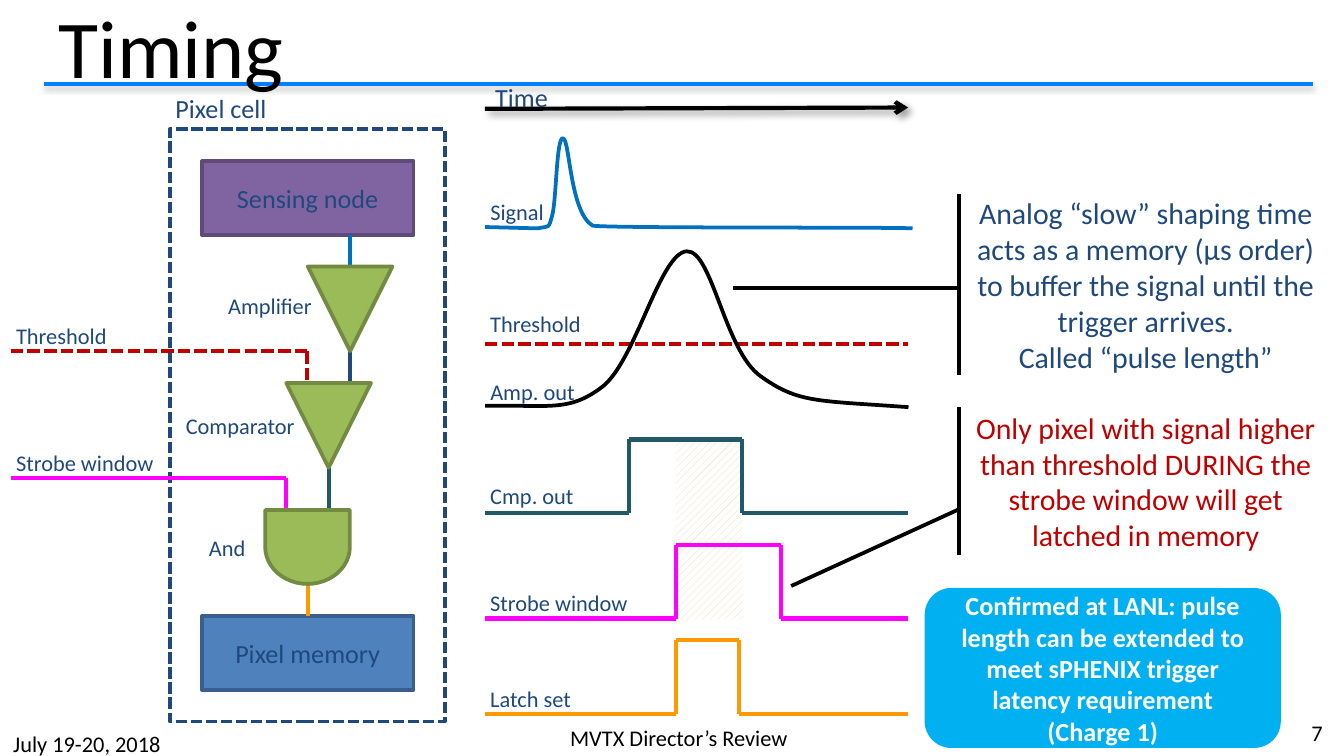
"""Build the pixel timing slide on a grid of 100 columns by 56.25 rows."""
from dataclasses import dataclass
from typing import Optional

from lxml import etree
from pptx import Presentation
from pptx.dml.color import RGBColor
from pptx.enum.dml import MSO_LINE, MSO_PATTERN
from pptx.enum.shapes import MSO_CONNECTOR, MSO_SHAPE
from pptx.enum.text import MSO_ANCHOR, PP_ALIGN
from pptx.oxml.ns import qn
from pptx.util import Inches, Pt

CELL = Inches(0.1)
STRAIGHT = MSO_CONNECTOR.STRAIGHT
DASH = MSO_LINE.SQUARE_DOT
HATCH = MSO_PATTERN.WIDE_UPWARD_DIAGONAL
RECT, ROUNDED = MSO_SHAPE.RECTANGLE, MSO_SHAPE.ROUNDED_RECTANGLE
TRIANGLE, DELAY = MSO_SHAPE.ISOSCELES_TRIANGLE, MSO_SHAPE.FLOWCHART_DELAY
CALLOUT = MSO_SHAPE.LINE_CALLOUT_1_ACCENT_BAR
MIDDLE = MSO_ANCHOR.MIDDLE
LEFT, CENTER, RIGHT = PP_ALIGN.LEFT, PP_ALIGN.CENTER, PP_ALIGN.RIGHT

BLACK, WHITE, NAVY, RED = "000000", "FFFFFF", "1F497D", "C00000"
BLUE, MAGENTA, TEAL, ORANGE = "0070C0", "FF00FF", "215968", "FF9900"
GREEN, DARK_GREEN = "9BBB59", "738A42"
TIGHT, NORMAL = (0.4, 0.4), (1, 0.5)
PLOT_LEFT, PLOT_RIGHT, PULSE_HEIGHT = 36.08, 67.57, 5.5


@dataclass
class Shadow:
    """Outer shadow in points, percent and degrees."""
    color: str
    alpha: int
    blur: float
    distance: float
    angle: int


@dataclass
class Label:
    """Text with its format."""
    text: str
    size: int = 12
    color: str = NAVY
    align: PP_ALIGN = LEFT
    inset: tuple = TIGHT
    bold: bool = False
    wrap: bool = True


@dataclass
class Block:
    """Preset shape at (column, row, columns, rows)."""
    box: tuple
    kind: MSO_SHAPE = RECT
    fill: Optional[str] = None
    line: Optional[str] = None
    dash: Optional[MSO_LINE] = None
    rotation: int = 0
    label: Optional[Label] = None
    pointer: tuple = ()


@dataclass
class Wire:
    """Straight line between two grid points."""
    start: tuple
    end: tuple
    color: str
    dash: Optional[MSO_LINE] = None
    shadow: Optional[Shadow] = None
    arrow: bool = False


@dataclass
class Pulse:
    """Rectangular pulse on a baseline."""
    base: float
    rise: float
    fall: float
    color: str


def cells(values: tuple) -> list:
    return [round(value * CELL) for value in values]


def rgb(color: str) -> RGBColor:
    return RGBColor.from_string(color)


def apply(target, values: dict) -> None:
    for name, value in values.items():
        setattr(target, name, value)


def style_line(line, color: str, width: float, dash=None) -> None:
    line.color.rgb = rgb(color)
    apply(line, {"width": Pt(width), "dash_style": dash})


def write(frame, label: Label) -> None:
    across, down = cells(label.inset)
    apply(frame, {"word_wrap": label.wrap, "vertical_anchor": MIDDLE,
                  "margin_left": across, "margin_right": across,
                  "margin_top": down, "margin_bottom": down})
    frame.text = label.text
    for paragraph in frame.paragraphs:
        paragraph.alignment = label.align
        for run in paragraph.runs:
            apply(run.font, {"name": "Calibri", "size": Pt(label.size), "bold": label.bold})
            run.font.color.rgb = rgb(label.color)


def draw_label(shapes, box: tuple, label: Label) -> None:
    write(shapes.add_textbox(*cells(box)).text_frame, label)


def draw_block(shapes, block: Block):
    shape = shapes.add_shape(block.kind, *cells(block.box))
    shape.shadow.inherit = False
    shape.rotation = block.rotation
    for index, share in enumerate(block.pointer):
        shape.adjustments[index] = share
    if block.fill:
        shape.fill.solid()
        shape.fill.fore_color.rgb = rgb(block.fill)
    else:
        shape.fill.background()
    if block.line:
        style_line(shape.line, block.line, 2, block.dash)
    else:
        shape.line.fill.background()
    if block.label:
        write(shape.text_frame, block.label)
    return shape


def draw_wire(shapes, wire: Wire):
    line = shapes.add_connector(STRAIGHT, *cells(wire.start + wire.end))
    style_line(line.line, wire.color, 2.25, wire.dash)
    if wire.arrow:
        etree.SubElement(line.line._get_or_add_ln(), qn("a:tailEnd"), type="arrow")
    effects = etree.SubElement(line._element.spPr, qn("a:effectLst"))
    if wire.shadow:
        cast = wire.shadow
        outer = etree.SubElement(
            effects, qn("a:outerShdw"), blurRad=str(Pt(cast.blur)), dist=str(Pt(cast.distance)),
            dir=str(cast.angle * 60000), rotWithShape="0")
        tint = etree.SubElement(outer, qn("a:srgbClr"), val=cast.color)
        etree.SubElement(tint, qn("a:alpha"), val=str(cast.alpha * 1000))
    return line


def draw_pulse(shapes, pulse: Pulse) -> None:
    base, top = pulse.base, pulse.base - PULSE_HEIGHT
    corners = [(PLOT_LEFT, base), (pulse.rise, base), (pulse.rise, top),
               (pulse.fall, top), (pulse.fall, base), (PLOT_RIGHT, base)]
    for start, end in zip(corners, corners[1:]):
        draw_wire(shapes, Wire(start, end, pulse.color))


def draw_curve(shapes, knots: list, color: str) -> None:
    """Draw a Bezier chain: a start, then two controls and an end per piece."""
    builder = shapes.build_freeform(*cells(knots[0]))
    builder.add_line_segments([cells(knot) for knot in knots[1:]], close=False)
    curve = builder.convert_to_shape()
    curve.shadow.inherit = False
    curve.fill.background()
    style_line(curve.line, color, 2)
    outline = next(curve._element.iter(qn("a:path")))
    for index, segment in enumerate(outline.findall(qn("a:lnTo"))):
        if index % 3 == 0:
            bend = etree.SubElement(outline, qn("a:cubicBezTo"))
        bend.append(segment[0])
        outline.remove(segment)


def main() -> None:
    deck = Presentation()
    deck.slide_width, deck.slide_height = cells((100, 56.25))
    shapes = deck.slides.add_slide(deck.slide_layouts[6]).shapes

    draw_wire(shapes, Wire((3.3, 6.25), (97.7, 6.25), "0080FF",
                           shadow=Shadow("808080", 38, 3.1, 1.6, 90)))
    draw_label(shapes, (3.35, 0.3, 91.7, 6.2), Label("Timing", 44, BLACK, inset=NORMAL))
    overlap = draw_block(shapes, Block((50.27, 32.7, 5, 13.4)))
    overlap.fill.patterned()
    overlap.fill.pattern = HATCH
    overlap.fill.fore_color.rgb, overlap.fill.back_color.rgb = rgb("FCD5B5"), rgb(WHITE)

    draw_block(shapes, Block((12.65, 9.6, 20.45, 44.1), line=NAVY, dash=DASH))
    draw_block(shapes, Block((15.03, 12, 15.74, 5.5), fill="8064A2", line="5F4A78",
                             label=Label("Sensing node", 14, align=CENTER, inset=NORMAL)))
    memory = draw_block(shapes, Block((15.03, 45.83, 15.74, 5.5), fill="4F81BD", line="3A5F8C",
                                      label=Label("Pixel memory", 14, align=CENTER, inset=NORMAL)))
    for wire in (
        Wire((PLOT_LEFT, 8.1), (PLOT_RIGHT, 8), BLACK,
             shadow=Shadow(BLACK, 40, 4, 3, 45), arrow=True),
        Wire((PLOT_LEFT, 25.57), (PLOT_RIGHT, 25.57), RED, DASH),
        Wire((26.03, 26.13), (26.03, 28.5), NAVY),
        Wire((22.87, 26.13), (22.87, 28.5), RED, DASH),
        Wire((26.03, 17.5), (26.03, 19.83), BLUE),
        Wire((22.87, 26.13), (0.8, 26.13), RED, DASH),
        Wire((21.3, 35.57), (21.3, 38), MAGENTA),
        Wire((21.3, 35.57), (0.8, 35.57), MAGENTA),
        Wire((24.47, 34.8), (24.47, 38), TEAL),
    ):
        draw_wire(shapes, wire)
    latch = draw_wire(shapes, Wire((22.9, 43.5), (22.9, 45.83), ORANGE))
    latch.end_connect(memory, 0)
    for kind, box, rotation in ((TRIANGLE, (22.9, 19.83, 6.3, 6.3), 180),
                                (TRIANGLE, (21.3, 28.5, 6.3, 6.3), 180),
                                (DELAY, (20.13, 37.55, 5.5, 6.3), 90)):
        draw_block(shapes, Block(box, kind, GREEN, DARK_GREEN, rotation=rotation))

    draw_curve(shapes, [(36.1, 30.2), (40.8, 30.1), (42.3, 30.7), (44.8, 28.8), (47.3, 26.9),
                        (49.1, 18.8), (51.1, 18.7), (53, 18.6), (53.9, 26.1), (56.6, 28),
                        (59.4, 30), (60.7, 29.8), (67.6, 30.3)], BLACK)
    draw_curve(shapes, [(36.1, 16.9), (36.2, 16.9), (40, 17), (40, 17), (40.9, 16.8),
                        (40.8, 17.1), (41.1, 16), (41.4, 14.9), (41.4, 10.1), (41.9, 10.3),
                        (42.4, 10.4), (42.4, 15.8), (44.1, 16.8), (45.6, 17), (66.7, 16.9),
                        (67.9, 17)], BLUE)
    for pulse in (Pulse(38.2, 46.83, 55.23, TEAL), Pulse(46.03, 50.27, 58.1, MAGENTA),
                  Pulse(53.1, 50.27, 55, ORANGE)):
        draw_pulse(shapes, pulse)

    for text, column, row, width in (
        ("Threshold", PLOT_LEFT, 22.9, 10), ("Amp. out", PLOT_LEFT, 27.9, 7.8),
        ("Cmp. out", PLOT_LEFT, 35.7, 10), ("Strobe window", PLOT_LEFT, 43.65, 12.6),
        ("Signal", PLOT_LEFT, 14.55, 5.5), ("Latch set", PLOT_LEFT, 50.8, 12.6),
        ("Amplifier", 16.57, 21.55, 7.1), ("Comparator", 13.42, 30.5, 9.5),
        ("And", 15.15, 39.55, 3.7), ("Threshold", 0.8, 23.8, 10),
        ("Strobe window", 0.8, 33.2, 13),
    ):
        draw_label(shapes, (column, row, width, 2.4), Label(text))
    draw_label(shapes, (12.65, 6.5, 10, 3.1), Label("Pixel cell", 14, wrap=False))
    draw_label(shapes, (36.45, 5.65, 10, 3.1), Label("Time", 14))

    for row, height, color, pointer, text in (
        (30.3, 11, RED, (0.69, -0.01, 1.21, -0.47),
         "Only pixel with signal higher than threshold DURING the strobe window "
         "will get latched in memory"),
        (14.43, 13.5, NAVY, (0.52, -0.01, 0.52, -0.63),
         "Analog “slow” shaping time acts as a memory (µs order) to buffer the signal "
         "until the trigger arrives.\nCalled “pulse length”"),
    ):
        draw_block(shapes, Block((71.65, row, 27.2, height), CALLOUT, line=BLACK, pointer=pointer,
                                 label=Label(text, 16, color, CENTER)))
    draw_block(shapes, Block((68.8, 43.75, 26.5, 11.9), ROUNDED, "00B0F0", label=Label(
        "Confirmed at LANL: pulse length can be extended to meet sPHENIX trigger "
        "latency requirement\n(Charge 1)", 14, WHITE, CENTER, NORMAL, bold=True)))

    for text, box, align in (("7", (93.6, 53, 5.8, 3), RIGHT),
                             ("July 19-20, 2018", (0, 54.4, 23.3, 1.9), LEFT),
                             ("MVTX Director’s Review", (34.67, 53.75, 31.7, 2.3), CENTER)):
        draw_label(shapes, box, Label(text, 12, BLACK, align, NORMAL))
    deck.save("out.pptx")


if __name__ == "__main__":
    main()
